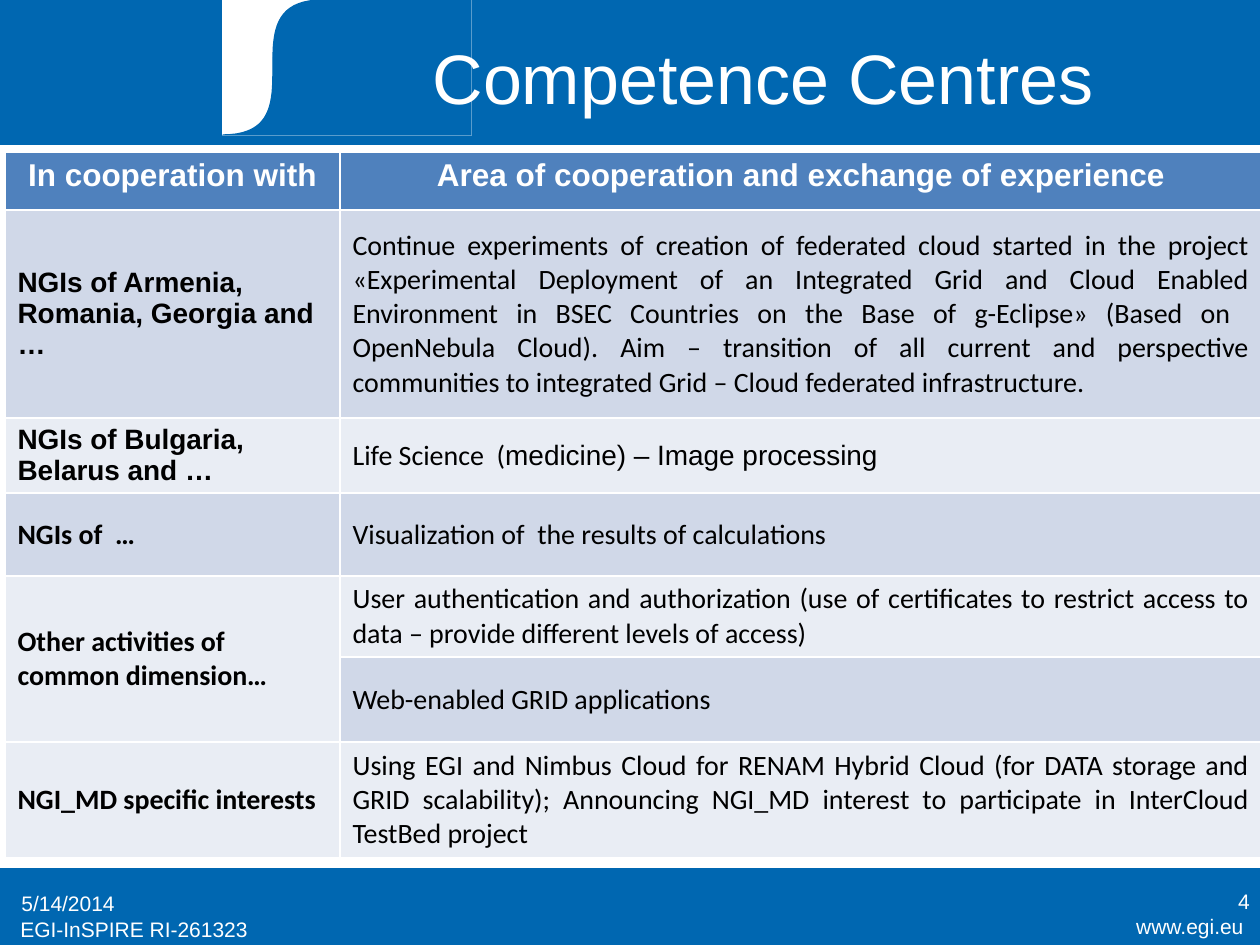
"""Build the Competence Centres slide: banner, cooperation table and footer."""
import pptx
import pptx.dml.color
import pptx.enum.shapes
import pptx.enum.text
import pptx.util

ALIGN = pptx.enum.text.PP_ALIGN
ANCHOR = pptx.enum.text.MSO_ANCHOR
SCALE = 914400 / 126
COLORS = {"blue": "0067B1", "white": "FFFFFF", "black": "000000",
          "header": "4F81BD", "dark": "D0D8E8", "light": "E9EDF4"}

TITLE = ("Competence Centres", (292, 16, 942, 120))
HEADER = ("In cooperation with", "Area of cooperation and exchange of experience")
ROWS = [
    ("dark", [("NGIs of Armenia, Romania, Georgia and …", "Arial")],
     [("Continue experiments of creation of federated cloud started in the project "
       "«Experimental Deployment of an Integrated Grid and Cloud Enabled Environment "
       "in BSEC Countries on the Base of g-Eclipse» (Based on  OpenNebula Cloud). "
       "Aim – transition of all current and perspective communities to integrated "
       "Grid – Cloud federated infrastructure.", "Calibri")]),
    ("light", [("NGIs of Bulgaria, Belarus and …", "Arial")],
     [("Life Science  (", "Calibri"), ("medicine) – Image processing", "Arial")]),
    ("dark", [("NGIs of  …", "Calibri")],
     [("Visualization of  the results of calculations", "Calibri")]),
    ("light", [("Other activities of common dimension…", "Calibri")],
     [("User authentication and authorization (use of certificates to restrict access "
       "to data – provide different levels of access)", "Calibri")]),
    ("dark", None, [("Web-enabled GRID applications", "Calibri")]),
    ("light", [("NGI_MD specific interests", "Calibri")],
     [("Using EGI and Nimbus Cloud for RENAM Hybrid Cloud (for DATA storage and GRID "
       "scalability); Announcing NGI_MD interest to participate in InterCloud TestBed "
       "project", "Calibri")]),
]
TABLE_LEFT, TABLE_TOP = 5, 152
COLUMN_WIDTHS = (335, 922)
ROW_HEIGHTS = (58, 208, 75, 83, 81, 85, 115)
FOOTER = [
    ("www.egi.eu", (1057, 907, 199, 39), ALIGN.RIGHT, ANCHOR.TOP),
    ("EGI-InSPIRE RI-261323", (8, 910, 315, 39), ALIGN.LEFT, ANCHOR.TOP),
    ("5/14/2014", (9, 878, 294, 50), ALIGN.LEFT, ANCHOR.MIDDLE),
    ("4", (968, 876, 294, 50), ALIGN.RIGHT, ANCHOR.MIDDLE),
]
BANDS = [((0, 869, 1260, 76), "blue"), ((0, 0, 1260, 144), "blue"),
         ((223, 0, 248, 135), "white")]
CURVE = [(223, 135), (323, 135), (223, 0), (323, 0)]
CURVE_RIGHT = 471
CURVE_STEPS = 40


def px(value):
    return pptx.util.Emu(round(value * SCALE))


def rgb(name):
    return pptx.dml.color.RGBColor.from_string(COLORS[name])


def paint(shape, color):
    shape.shadow.inherit = False
    shape.fill.solid()
    shape.fill.fore_color.rgb = rgb(color)
    shape.line.color.rgb = rgb(color)
    shape.line.width = pptx.util.Pt(0.75)


def write(frame, spans, align, color, size, bold=False):
    para = frame.paragraphs[0]
    para.alignment = align
    for text, font in spans:
        span = para.add_run()
        span.text = text
        formats = {"name": font, "size": pptx.util.Pt(size), "bold": bold}
        for name, value in formats.items():
            setattr(span.font, name, value)
        span.font.color.rgb = rgb(color)


def curve_point(step):
    t = step / CURVE_STEPS
    weights = ((1 - t) ** 3, 3 * t * (1 - t) ** 2, 3 * t ** 2 * (1 - t), t ** 3)
    return tuple(px(sum(w * point[axis] for w, point in zip(weights, CURVE)))
                 for axis in (0, 1))


def add_banner(page):
    for place, color in BANDS:
        band = page.shapes.add_shape(
            pptx.enum.shapes.MSO_SHAPE.RECTANGLE, *map(px, place))
        paint(band, color)
    points = [curve_point(step) for step in range(CURVE_STEPS + 1)]
    points += [(px(CURVE_RIGHT), 0), (px(CURVE_RIGHT), px(CURVE[0][1]))]
    builder = page.shapes.build_freeform(*points[0])
    builder.add_line_segments(points[1:], close=True)
    paint(builder.convert_to_shape(), "blue")


def add_title(page):
    text, place = TITLE
    title = page.shapes.title
    for name, value in zip(("left", "top", "width", "height"), place):
        setattr(title, name, px(value))
    title.text_frame.vertical_anchor = ANCHOR.MIDDLE
    write(title.text_frame, [(text, "Arial")], ALIGN.CENTER, "white", 40)
    page.shapes._spTree.append(title._element)


def add_footer(page):
    for text, place, align, anchor in FOOTER:
        box = page.shapes.add_textbox(*map(px, place))
        box.text_frame.word_wrap = True
        box.text_frame.vertical_anchor = anchor
        write(box.text_frame, [(text, "Arial")], align, "white", 12)


def fill_cell(cell, color, anchor):
    cell.fill.solid()
    cell.fill.fore_color.rgb = rgb(color)
    cell.vertical_anchor = anchor


def add_table(page):
    place = (TABLE_LEFT, TABLE_TOP, sum(COLUMN_WIDTHS), sum(ROW_HEIGHTS))
    table = page.shapes.add_table(
        len(ROW_HEIGHTS), len(COLUMN_WIDTHS), *map(px, place)).table
    for column, width in zip(table.columns, COLUMN_WIDTHS):
        column.width = px(width)
    for row, height in zip(table.rows, ROW_HEIGHTS):
        row.height = px(height)
    for index, text in enumerate(HEADER):
        cell = table.cell(0, index)
        fill_cell(cell, "header", ANCHOR.TOP)
        write(cell.text_frame, [(text, "Arial")], ALIGN.CENTER, "white", 18, True)
    for index, (color, partner, area) in enumerate(ROWS, 1):
        left, right = table.cell(index, 0), table.cell(index, 1)
        fill_cell(right, color, ANCHOR.MIDDLE)
        write(right.text_frame, area, ALIGN.JUSTIFY, "black", 16)
        if partner is None:
            table.cell(index - 1, 0).merge(left)
        else:
            fill_cell(left, color, ANCHOR.MIDDLE)
            write(left.text_frame, partner, ALIGN.LEFT, "black", 16, True)


def main():
    deck = pptx.Presentation()
    deck.slide_width, deck.slide_height = px(1260), px(945)
    page = deck.slides.add_slide(deck.slide_layouts.get_by_name("Title Only"))
    add_banner(page)
    add_footer(page)
    add_title(page)
    add_table(page)
    deck.save("out.pptx")


if __name__ == "__main__":
    main()
